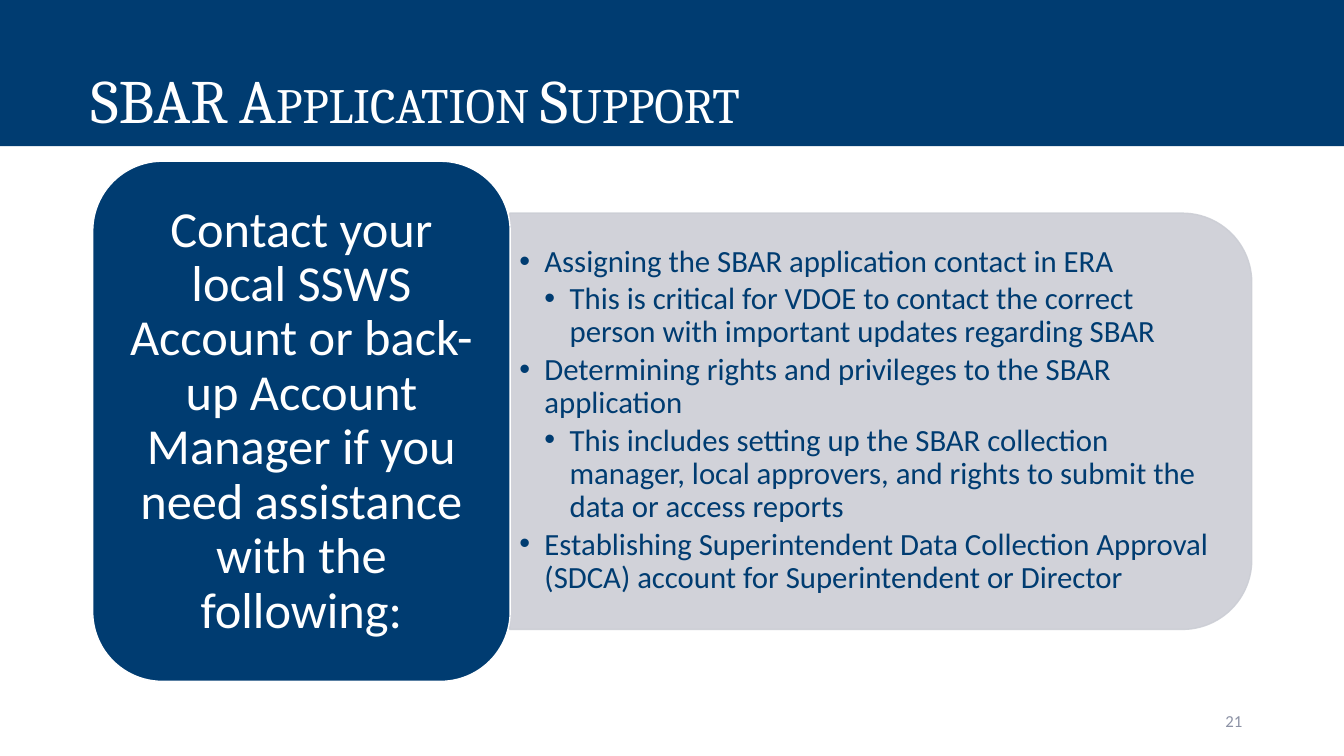
from pptx import Presentation
from pptx.dml.color import RGBColor
from pptx.enum.shapes import MSO_SHAPE as Shape
from pptx.enum.text import MSO_ANCHOR as Anchor, MSO_AUTO_SIZE as AutoSize, PP_ALIGN as Align
from pptx.oxml.ns import qn
from pptx.util import Inches, Pt
from lxml import etree

NAVY = RGBColor(0x00, 0x3C, 0x71)
WHITE = RGBColor(0xFF, 0xFF, 0xFF)
PANEL_GRAY = RGBColor(0xCC, 0xCE, 0xD5)
NUMBER_GRAY = RGBColor(0x8C, 0x92, 0xA5)

CONTACT_TOPICS = [
    (0, "Assigning the SBAR application contact in ERA"),
    (1, "This is critical for VDOE to contact the correct person with important updates regarding SBAR"),
    (0, "Determining rights and privileges to the SBAR application"),
    (1, "This includes setting up the SBAR collection manager, local approvers, "
        "and rights to submit the data or access reports"),
    (0, "Establishing Superintendent Data Collection Approval (SDCA) account for Superintendent or Director"),
]


def set_frame(box, anchor, left, top, right, bottom):
    frame = box.text_frame
    values = {
        "word_wrap": True, "auto_size": AutoSize.NONE, "vertical_anchor": anchor,
        "margin_left": Inches(left), "margin_top": Inches(top),
        "margin_right": Inches(right), "margin_bottom": Inches(bottom),
    }
    for name, value in values.items():
        setattr(frame, name, value)
    return frame


def write_para(para, text, font_name, size, color, **layout):
    for name, value in layout.items():
        setattr(para, name, value)
    span = para.add_run()
    span.text = text
    span.font.name = font_name
    span.font.size = Pt(size)
    span.font.color.rgb = color
    return span


deck = Presentation()
deck.slide_width, deck.slide_height = Inches(13.33), Inches(7.5)
page = deck.slides.add_slide(deck.slide_layouts[1])
title, topics = page.shapes.title, page.placeholders[1]

# Title band
title.left, title.top, title.width, title.height = 0, 0, deck.slide_width, Inches(1.45)
title.fill.solid()
title.fill.fore_color.rgb = NAVY
frame = set_frame(title, Anchor.TOP, 0.9, 0.7, 0.1, 0.05)
span = write_para(frame.paragraphs[0], "SBAR Application Support", "Cambria", 44, WHITE,
                  alignment=Align.LEFT, line_spacing=0.9, space_before=Pt(10))
span.font._element.set("cap", "small")

# Gray panel, rounded on its right side, and the navy card
panel = page.shapes.add_shape(Shape.ROUND_2_SAME_RECTANGLE,
                              Inches(6.67), Inches(0.5), Inches(4.13), Inches(7.36))
panel.rotation = 90
card = page.shapes.add_shape(Shape.ROUNDED_RECTANGLE,
                             Inches(0.92), Inches(1.6), Inches(4.14), Inches(5.16))
for box, fill_color, line_color in [(panel, PANEL_GRAY, PANEL_GRAY), (card, NAVY, WHITE)]:
    box.shadow.inherit = False
    box.fill.solid()
    box.fill.fore_color.rgb = fill_color
    box.line.color.rgb = line_color
    box.line.width = Pt(1)
for color in panel._element.spPr.iter(qn("a:srgbClr")):
    etree.SubElement(color, qn("a:alpha"), val="90000")

frame = set_frame(card, Anchor.MIDDLE, 0.15, 0.07, 0.15, 0.07)
write_para(frame.paragraphs[0],
           "Contact your local SSWS Account or back-up Account Manager "
           "if you need assistance with the following:",
           "Calibri", 36, WHITE, alignment=Align.CENTER, line_spacing=0.9)

# Bulleted topics, brought in front of the panel
topics.left, topics.top = Inches(5.06), Inches(2.31)
topics.width, topics.height = Inches(7.16), Inches(3.72)
page.shapes._spTree.append(topics._element)
frame = set_frame(topics, Anchor.MIDDLE, 0.09, 0.05, 0.09, 0.05)
for index, (level, text) in enumerate(CONTACT_TOPICS):
    para = frame.add_paragraph() if index else frame.paragraphs[0]
    write_para(para, text, "Calibri", 22, NAVY, level=level, alignment=Align.LEFT,
               line_spacing=0.9, space_before=Pt(0), space_after=Pt(3))
    properties = para._element.get_or_add_pPr()
    properties.set("marL", str(Inches(0.25 * (level + 1))))
    properties.set("indent", str(Inches(-0.25)))
    etree.SubElement(properties, qn("a:buFont"), typeface="Arial")
    etree.SubElement(properties, qn("a:buChar"), char="•")

# Page number
number = page.shapes.add_textbox(Inches(9.42), Inches(6.95), Inches(3), Inches(0.4))
frame = set_frame(number, Anchor.MIDDLE, 0.1, 0.05, 0.1, 0.05)
write_para(frame.paragraphs[0], "21", "Calibri", 12, NUMBER_GRAY, alignment=Align.RIGHT)

deck.save("out.pptx")
